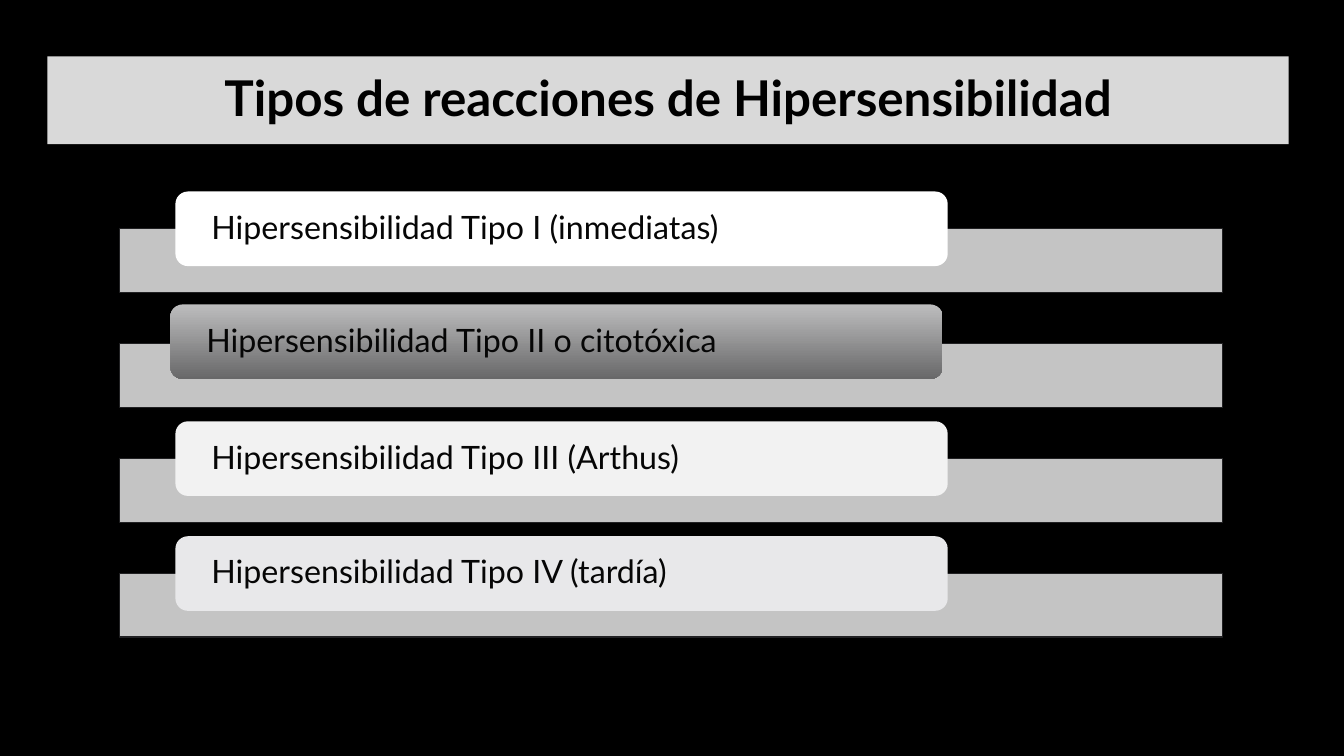
"""Build a slide listing the four types of hypersensitivity reactions."""
from dataclasses import dataclass

from lxml.etree import SubElement
from pptx import Presentation
from pptx.dml.color import RGBColor as RGB
from pptx.enum.shapes import MSO_SHAPE as Form
from pptx.enum.text import MSO_ANCHOR as Anchor, PP_ALIGN as Align
from pptx.oxml.ns import qn
from pptx.shapes.autoshape import Shape
from pptx.slide import Slide
from pptx.util import Inches, Pt

FONT = "Lato"
TOP, STEP = 1.9, 1.14
DROP = 0.37


@dataclass
class Item:
    text: str
    fills: tuple[str, ...]
    dx: float = 0
    dy: float = 0


ITEMS = [
    Item("Hipersensibilidad Tipo I (inmediatas)", ("FFFFFF",)),
    Item("Hipersensibilidad Tipo II o citotóxica", ("BDBDBE", "686869"), -0.05, -0.02),
    Item("Hipersensibilidad Tipo III (Arthus)", ("F2F2F2",)),
    Item("Hipersensibilidad Tipo IV (tardía)", ("E8E8EA",)),
]


def color(code: str) -> RGB:
    return RGB.from_string(code)


def add_box(slide: Slide, form: Form, x: float, y: float, w: float, h: float,
            *fills: str) -> Shape:
    box = slide.shapes.add_shape(form, Inches(x), Inches(y), Inches(w), Inches(h))
    box.shadow.inherit = False
    box.line.fill.background()
    if len(fills) > 1:
        box.fill.gradient()
        box.fill.gradient_angle = 270
        for stop, code in zip(box.fill.gradient_stops, fills):
            stop.color.rgb = color(code)
    else:
        box.fill.solid()
        box.fill.fore_color.rgb = color(fills[0])
    return box


def write(box: Shape, text: str, size: float, code: str, align: Align,
          inset: float = 0.1, bold: bool = False) -> None:
    frame = box.text_frame
    frame.word_wrap = True
    frame.vertical_anchor = Anchor.MIDDLE
    frame.margin_left = frame.margin_right = Inches(inset)
    frame.margin_top = frame.margin_bottom = 0
    para = frame.paragraphs[0]
    para.text = text
    para.alignment = align
    para.line_spacing = 0.9
    font = para.font
    font.name, font.size, font.bold = FONT, Pt(size), bold
    font.color.rgb = color(code)


def add_bar(slide: Slide, y: float) -> None:
    bar = add_box(slide, Form.RECTANGLE, 1.19, y, 10.94, 0.63, "DADADA")
    tint = bar._element.spPr.find(qn("a:solidFill"))[0]
    SubElement(tint, qn("a:alpha"), val="90000")
    bar.line.color.rgb = color("212123")
    bar.line.width = Pt(0.75)


def add_item(slide: Slide, item: Item, y: float) -> None:
    add_bar(slide, y + DROP)
    label = add_box(slide, Form.ROUNDED_RECTANGLE, 1.74 + item.dx, y + item.dy,
                    7.66, 0.74, *item.fills)
    write(label, item.text, 23, "060606", Align.LEFT, 0.32)


def main() -> None:
    deck = Presentation()
    deck.slide_width, deck.slide_height = Inches(13.33), Inches(7.5)
    slide = deck.slides.add_slide(deck.slide_layouts[6])
    slide.background.fill.solid()
    slide.background.fill.fore_color.rgb = color("000000")

    title = add_box(slide, Form.RECTANGLE, 0.47, 0.56, 12.31, 0.87, "D9D9D9")
    write(title, "Tipos de reacciones de Hipersensibilidad", 35.2, "000000",
          Align.CENTER, bold=True)
    for row, item in enumerate(ITEMS):
        add_item(slide, item, TOP + row * STEP)
    deck.save("out.pptx")


if __name__ == "__main__":
    main()
